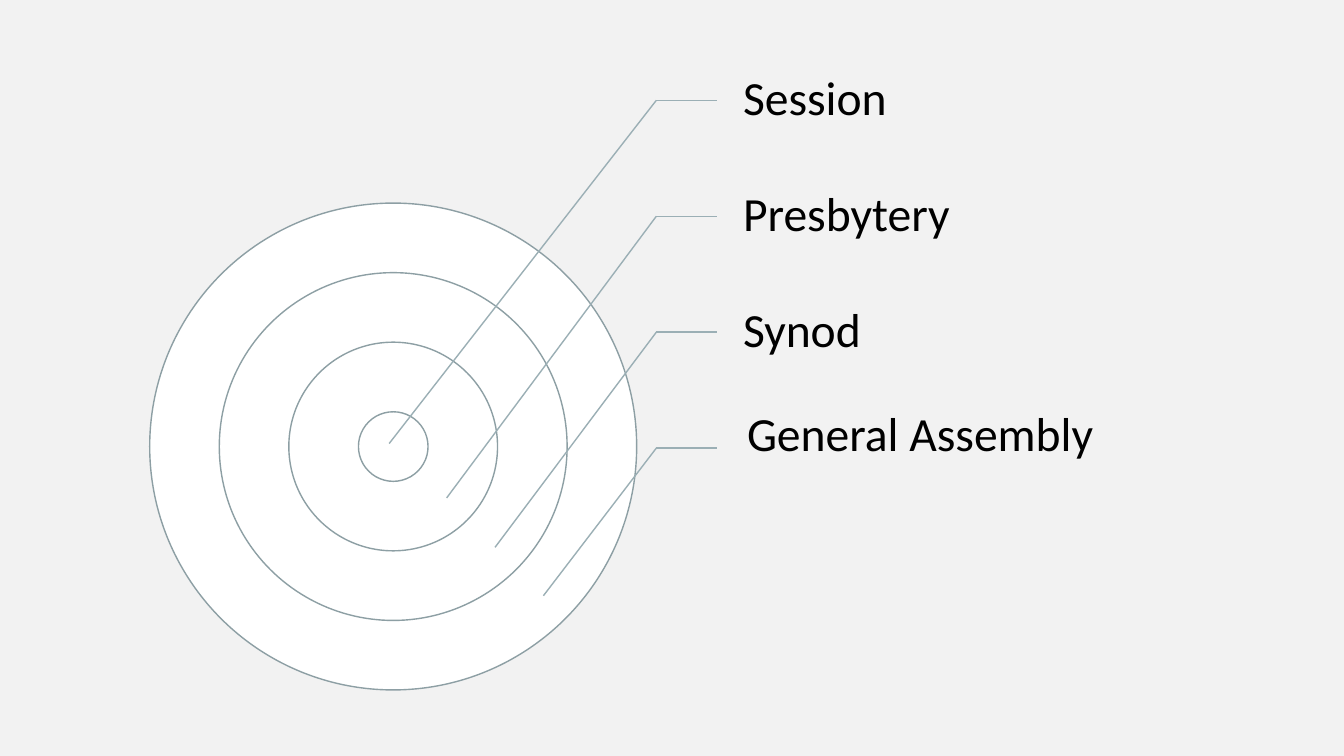
from pptx import Presentation
from pptx.dml import color
from pptx.enum import shapes, text
from pptx.oxml import ns
from pptx.util import Inches, Pt
from lxml import etree


def paint(color_format, value):
    color_format.rgb = color.RGBColor.from_string(value)


def add_line(slide, start_x, start_y, end_x, end_y):
    connector = slide.shapes.add_connector(
        shapes.MSO_CONNECTOR.STRAIGHT,
        Inches(start_x), Inches(start_y), Inches(end_x), Inches(end_y))
    paint(connector.line.color, "9BAFB5")
    connector.line.width = Pt(1)
    etree.SubElement(connector.element.spPr, ns.qn("a:effectLst"))


presentation = Presentation()
presentation.slide_width = Inches(13.33)
presentation.slide_height = Inches(7.5)
slide = presentation.slides.add_slide(presentation.slide_layouts[6])
slide.background.fill.solid()
paint(slide.background.fill.fore_color, "F2F2F2")

center_x, center_y = 3.9, 4.43
inner_diameter = 0.69
for multiple in (7, 5, 3, 1):
    diameter = inner_diameter * multiple
    ring = slide.shapes.add_shape(
        shapes.MSO_SHAPE.OVAL,
        Inches(center_x - diameter / 2), Inches(center_y - diameter / 2),
        Inches(diameter), Inches(diameter))
    ring.shadow.inherit = False
    ring.fill.solid()
    paint(ring.fill.fore_color, "FFFFFF")
    paint(ring.line.color, "8D9FA4")
    ring.line.width = Pt(1)

elbow_x, label_x = 6.51, 7.11
first_y, row_height = 0.995, 1.15
levels = [
    ("Session", label_x, 0.42, 2.41, 3.86, 4.4),
    ("Presbytery", label_x, 1.57, 2.41, 4.43, 4.94),
    ("Synod", label_x, 2.72, 2.41, 4.91, 5.43),
    ("General Assembly", 7.15, 3.75, 4.06, 5.39, 5.91),
]
for row, (name, left, top, width, target_x, target_y) in enumerate(levels):
    label = slide.shapes.add_textbox(
        Inches(left), Inches(top), Inches(width), Inches(row_height))
    frame = label.text_frame
    frame.word_wrap = True
    frame.vertical_anchor = text.MSO_ANCHOR.MIDDLE
    frame.margin_left = Inches(0.26)
    frame.margin_right = Inches(0.05)
    frame.margin_top = frame.margin_bottom = Inches(0.05)
    paragraph = frame.paragraphs[0]
    paragraph.text = name
    paragraph.line_spacing = 0.9
    paragraph.font.name = "Calibri"
    paragraph.font.size = Pt(34)
    paint(paragraph.font.color, "000000")

    line_y = first_y + row * row_height
    add_line(slide, elbow_x, line_y, label_x, line_y)
    add_line(slide, elbow_x, line_y, target_x, target_y)

presentation.save("out.pptx")
